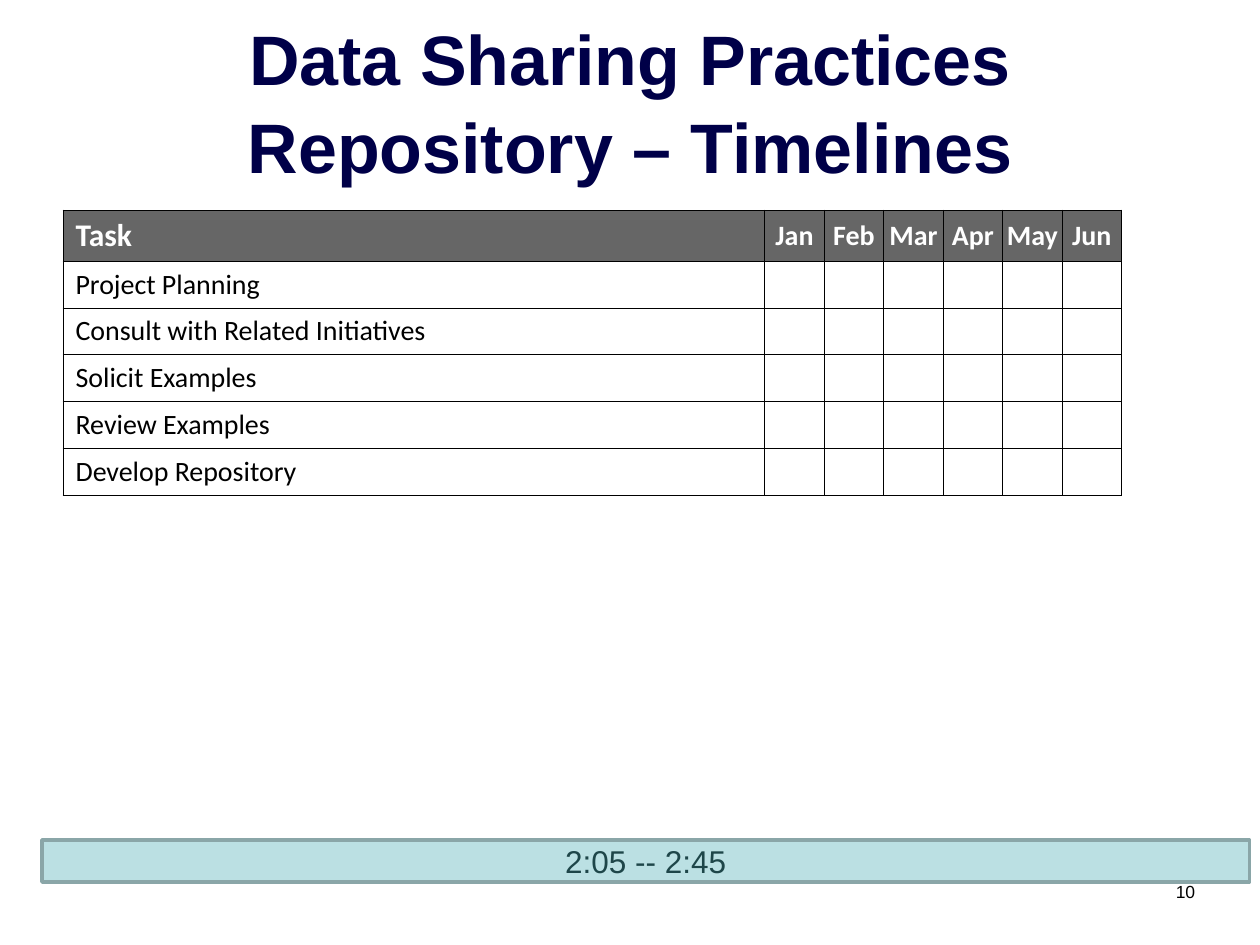
from dataclasses import dataclass

from lxml.etree import SubElement
from pptx import Presentation
from pptx.dml.color import RGBColor
from pptx.enum.shapes import MSO_SHAPE
from pptx.enum.text import MSO_ANCHOR, MSO_AUTO_SIZE, PP_ALIGN
from pptx.oxml.ns import qn
from pptx.util import Pt

COLORS = {
    "title": "000048",
    "text": "000000",
    "border": "000000",
    "header": "666666",
    "header_text": "FFFFFF",
    "bar": "BBE0E3",
    "bar_line": "8AA6A8",
    "bar_text": "1E4649",
}
MONTHS = ["Jan", "Feb", "Mar", "Apr", "May", "Jun"]
TASKS = [
    "Project Planning",
    "Consult with Related Initiatives",
    "Solicit Examples",
    "Review Examples",
    "Develop Repository",
]
TASK_WIDTH, MONTH_WIDTH = 401, 34
HEADER_HEIGHT, TASK_HEIGHT = 29.25, 26.75


@dataclass(frozen=True)
class TextStyle:
    size: float
    color: str
    font: str = "Arial"
    bold: bool = False
    align: PP_ALIGN = PP_ALIGN.LEFT


TITLE = TextStyle(40, "title", bold=True, align=PP_ALIGN.CENTER)
BAR = TextStyle(18, "bar_text", align=PP_ALIGN.CENTER)
PAGE = TextStyle(10, "text", align=PP_ALIGN.RIGHT)
TASK_HEADER = TextStyle(18, "header_text", "Calibri", True)
MONTH_HEADER = TextStyle(16, "header_text", "Calibri", True, PP_ALIGN.CENTER)
TASK = TextStyle(16, "text", "Calibri")


def color(name: str) -> RGBColor:
    return RGBColor.from_string(COLORS[name])


def write(frame, text: str, style: TextStyle) -> None:
    frame.text = text
    paragraph = frame.paragraphs[0]
    paragraph.alignment = style.align
    paragraph.font.size = Pt(style.size)
    paragraph.font.name = style.font
    paragraph.font.bold = style.bold
    paragraph.font.color.rgb = color(style.color)


def place(shape, left: float, top: float, width: float, height: float) -> None:
    shape.left, shape.top = Pt(left), Pt(top)
    shape.width, shape.height = Pt(width), Pt(height)


def add_borders(cell) -> None:
    properties = cell._tc.get_or_add_tcPr()
    for index, side in enumerate(("lnL", "lnR", "lnT", "lnB")):
        line = properties.makeelement(qn(f"a:{side}"), {"w": str(Pt(0.5))})
        fill = SubElement(line, qn("a:solidFill"))
        SubElement(fill, qn("a:srgbClr"), val=COLORS["border"])
        properties.insert(index, line)


def tighten(cell) -> None:
    cell.margin_left = cell.margin_right = cell.margin_top = Pt(0.72)
    cell.margin_bottom = Pt(0)
    cell.vertical_anchor = MSO_ANCHOR.MIDDLE


def add_timeline(slide) -> None:
    rows = [["Task", *MONTHS]] + [[task] + [""] * len(MONTHS) for task in TASKS]
    width = TASK_WIDTH + MONTH_WIDTH * len(MONTHS)
    height = HEADER_HEIGHT + TASK_HEIGHT * len(TASKS)
    timeline = slide.shapes.add_table(
        len(rows), len(rows[0]), Pt(36), Pt(120), Pt(width), Pt(height)
    ).table
    for index, column in enumerate(timeline.columns):
        column.width = Pt(MONTH_WIDTH if index else TASK_WIDTH)
    for r, texts in enumerate(rows):
        timeline.rows[r].height = Pt(TASK_HEIGHT if r else HEADER_HEIGHT)
        for c, text in enumerate(texts):
            cell = timeline.cell(r, c)
            if r:
                style = TASK
                cell.fill.background()
            else:
                style = MONTH_HEADER if c else TASK_HEADER
                cell.fill.solid()
                cell.fill.fore_color.rgb = color("header")
            write(cell.text_frame, text, style)
            if c:
                tighten(cell)
            add_borders(cell)


def add_title(slide) -> None:
    title = slide.shapes.title
    place(title, 36, 12, 648, 90)
    frame = title.text_frame
    frame.word_wrap = True
    frame.auto_size = MSO_AUTO_SIZE.NONE
    frame.vertical_anchor = MSO_ANCHOR.MIDDLE
    write(frame, "Data Sharing Practices Repository – Timelines", TITLE)
    frame.paragraphs[0].line_spacing = 1.04


def add_time_bar(slide) -> None:
    bar = slide.shapes.add_shape(
        MSO_SHAPE.RECTANGLE, Pt(24), Pt(480), Pt(690), Pt(24)
    )
    bar.shadow.inherit = False
    bar.fill.solid()
    bar.fill.fore_color.rgb = color("bar")
    bar.line.color.rgb = color("bar_line")
    bar.line.width = Pt(2)
    bar.text_frame.vertical_anchor = MSO_ANCHOR.MIDDLE
    write(bar.text_frame, "2:05 -- 2:45", BAR)


def add_page_number(slide) -> None:
    page = slide.shapes.add_textbox(Pt(564), Pt(500), Pt(126), Pt(20))
    page.text_frame.word_wrap = True
    write(page.text_frame, "10", PAGE)


def main() -> None:
    deck = Presentation()
    deck.slide_width, deck.slide_height = Pt(720), Pt(540)
    slide = deck.slides.add_slide(deck.slide_layouts.get_by_name("Title Only"))
    add_page_number(slide)
    add_title(slide)
    add_time_bar(slide)
    add_timeline(slide)
    deck.save("out.pptx")


if __name__ == "__main__":
    main()
